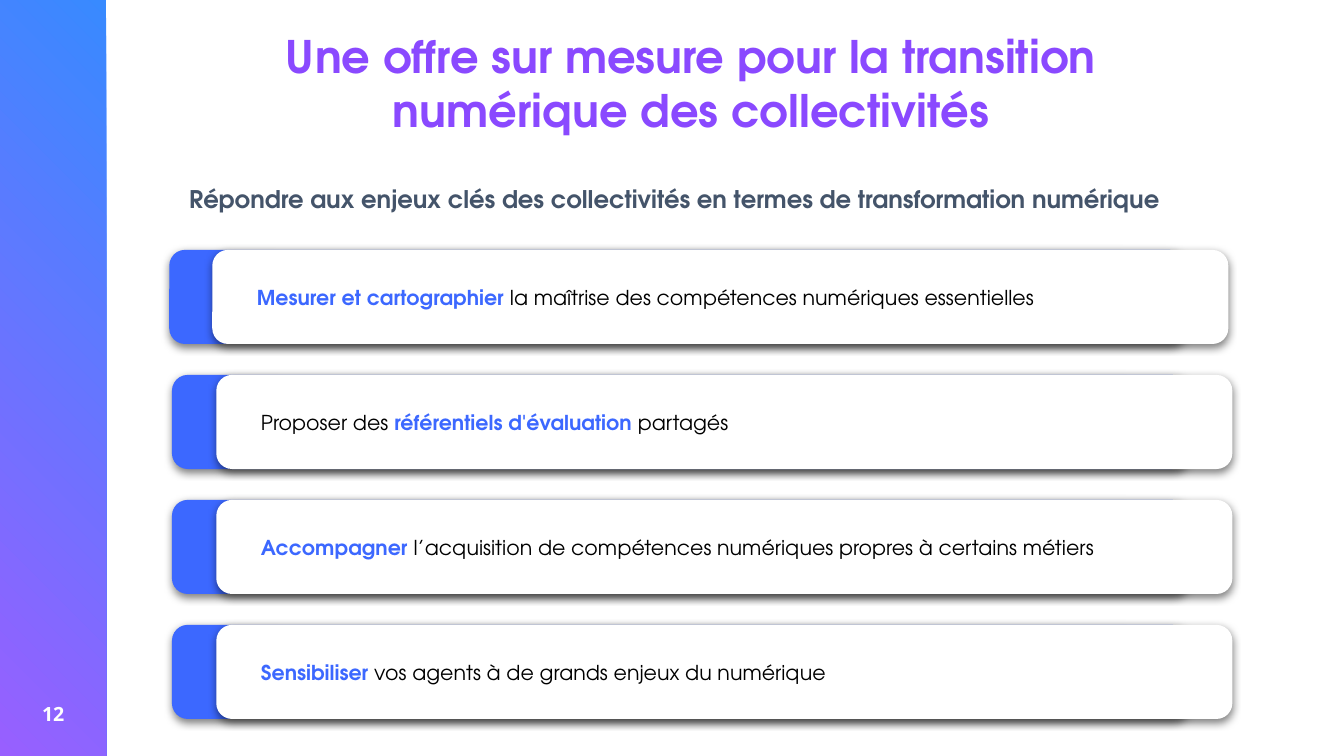
from lxml.etree import SubElement
from pptx import Presentation
from pptx.dml.color import RGBColor
from pptx.enum.shapes import MSO_SHAPE
from pptx.enum.text import MSO_ANCHOR, PP_ALIGN
from pptx.oxml.ns import qn
from pptx.util import Inches, Pt

COLORS = {
    "sky": "388AFF",
    "violet": "985FFF",
    "title": "8A49FF",
    "subtitle": "44546A",
    "accent": "3C68FF",
    "text": "000000",
    "white": "FFFFFF",
}
FONT = "TeX Gyre Adventor"
NUMBER_FONT = "Open Sans"

TITLE = "Une offre sur mesure pour la transition numérique des collectivités"
SUBTITLE = "Répondre aux enjeux clés des collectivités en termes de transformation numérique"
PAGE_NUMBER = "12"
OFFERS = [
    [("Mesurer et cartographier", True),
     (" la maîtrise des compétences numériques essentielles", False)],
    [("Proposer des", False), (" référentiels d'évaluation", True), (" partagés", False)],
    [("Accompagner ", True),
     ("l’acquisition de compétences numériques propres à certains métiers", False)],
    [("Sensibiliser", True), (" vos agents à de grands enjeux du numérique", False)],
]

SLIDE_W = Inches(10)
SLIDE_H = SLIDE_W * 9 // 16
CARD_W, CARD_H = 7.56, 0.7
CARD_TOP, CARD_STEP = 1.86, 0.93
FIRST_LEFTS = (1.26, 1.58)
OTHER_LEFTS = (1.28, 1.61)


def rgb(name):
    return RGBColor.from_string(COLORS[name])


def add_run(p, text, size, color, bold, font=FONT):
    r = p.add_run()
    r.text = text
    r.font.name = font
    r.font.size = Pt(size)
    r.font.bold = bold
    r.font.color.rgb = rgb(color)


def set_frame(tf, inset_x, inset_y, anchor):
    tf.word_wrap = True
    tf.margin_left = tf.margin_right = Inches(inset_x)
    tf.margin_top = tf.margin_bottom = Inches(inset_y)
    tf.vertical_anchor = anchor


def add_text(s, box, text, size, color, align=PP_ALIGN.CENTER, insets=(0, 0),
             anchor=MSO_ANCHOR.TOP, font=FONT):
    tf = s.shapes.add_textbox(*map(Inches, box)).text_frame
    set_frame(tf, *insets, anchor)
    p = tf.paragraphs[0]
    p.alignment = align
    add_run(p, text, size, color, True, font)


def add_sidebar(s):
    sp = s.shapes.add_shape(MSO_SHAPE.RECTANGLE, 0, 0, Inches(0.79), SLIDE_H)
    sp.shadow.inherit = False
    sp.line.fill.background()
    sp.fill.gradient()
    sp.fill.gradient_angle = 225
    for stop, name in zip(sp.fill.gradient_stops, ("sky", "violet")):
        stop.color.rgb = rgb(name)


def add_shadow(sp):
    sp.shadow.inherit = False
    effects = sp._element.spPr.find(qn("a:effectLst"))
    shadow = SubElement(effects, qn("a:outerShdw"), blurRad=str(Pt(4.5)),
                        dist=str(Pt(1.5)), dir="5400000", algn="ctr", rotWithShape="0")
    color = SubElement(shadow, qn("a:srgbClr"), val=COLORS["text"])
    SubElement(color, qn("a:alpha"), val="50000")


def add_card(s, left, top, fill):
    sp = s.shapes.add_shape(MSO_SHAPE.ROUNDED_RECTANGLE, Inches(left), Inches(top),
                            Inches(CARD_W), Inches(CARD_H))
    sp.adjustments[0] = 0.167
    sp.fill.solid()
    sp.fill.fore_color.rgb = rgb(fill)
    sp.line.fill.background()
    add_shadow(sp)
    return sp


def add_offer(s, lefts, top, runs):
    tab_left, card_left = lefts
    add_card(s, tab_left, top, "accent")
    tf = add_card(s, card_left, top, "white").text_frame
    set_frame(tf, 0.1, 0.1, MSO_ANCHOR.MIDDLE)
    p = tf.paragraphs[0]
    p.alignment = PP_ALIGN.LEFT
    p._p.get_or_add_pPr().set("marL", str(Inches(0.2)))
    for text, key in runs:
        add_run(p, text, 11, "accent" if key else "text", key)


def main():
    prs = Presentation()
    prs.slide_width, prs.slide_height = SLIDE_W, SLIDE_H
    s = prs.slides.add_slide(prs.slide_layouts[6])
    add_sidebar(s)
    add_text(s, (0, 5.18, 0.79, 0.25), PAGE_NUMBER, 10.5, "white",
             insets=(0.07, 0.04), font=NUMBER_FONT)
    add_text(s, (1.31, 0.21, 7.66, 0.81), TITLE, 24, "title", anchor=MSO_ANCHOR.MIDDLE)
    add_text(s, (1.31, 1.27, 7.83, 0.42), SUBTITLE, 13, "subtitle",
             align=PP_ALIGN.LEFT, insets=(0.1, 0.1))
    for i, runs in enumerate(OFFERS):
        lefts = OTHER_LEFTS if i else FIRST_LEFTS
        add_offer(s, lefts, CARD_TOP + i * CARD_STEP, runs)
    prs.save("out.pptx")


if __name__ == "__main__":
    main()
